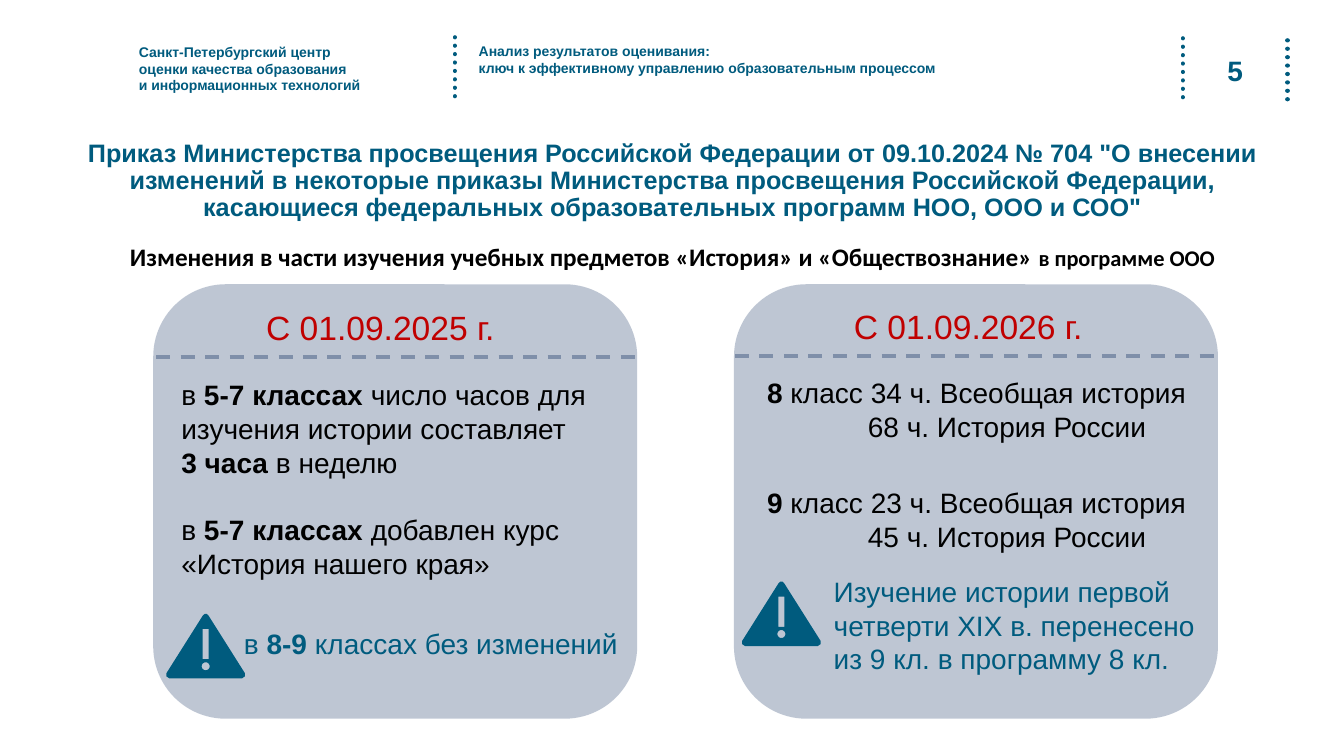
"""Slide on changes to history and social studies teaching hours."""
import math

import pptx
import pptx.util
from lxml import etree
from pptx.dml.color import RGBColor
from pptx.enum.dml import MSO_LINE
from pptx.enum.shapes import MSO_CONNECTOR, MSO_SHAPE
from pptx.enum.text import MSO_ANCHOR, PP_ALIGN
from pptx.oxml.ns import qn
from pptx.util import Inches

TEAL = RGBColor(0x00, 0x5B, 0x7E)
SLATE = RGBColor(0x7F, 0x8F, 0xA9)
RED = RGBColor(0xC0, 0x00, 0x00)
BLACK = RGBColor(0x00, 0x00, 0x00)

TRIANGLE = [(0.78, 0.59), (0.42, 0.02), (0.4, 0), (0.38, 0), (0.36, 0.02),
            (0, 0.59), (0, 0.62), (0.03, 0.64), (0.75, 0.64), (0.78, 0.62)]
BAR = [(0.36, 0.15), (0.42, 0.15), (0.42, 0.45), (0.36, 0.45)]
DOT = [(0.39 + 0.04 * math.cos(i * math.pi / 8),
        0.52 - 0.04 * math.sin(i * math.pi / 8)) for i in range(16)]


def add_text(slide, box, paragraphs, size, color, font="Arial", align=None,
             anchor=MSO_ANCHOR.TOP, spacing=None, gaps=(), indents=()):
    """Add a text box; each paragraph is a list of (text, bold[, size]) runs."""
    frame = slide.shapes.add_textbox(*map(Inches, box)).text_frame
    frame.word_wrap = True
    frame.vertical_anchor = anchor
    for index, runs in enumerate(paragraphs):
        paragraph = frame.paragraphs[0] if index == 0 else frame.add_paragraph()
        if index < len(indents):
            properties = paragraph._p.get_or_add_pPr()
            properties.set("marL", str(Inches(indents[index])))
        if index < len(gaps):
            paragraph.space_before = pptx.util.Pt(gaps[index])
        paragraph.alignment = align
        paragraph.line_spacing = spacing
        for text, bold, *own_size in runs:
            run = paragraph.add_run()
            run.text = text
            run.font.name = font
            run.font.size = pptx.util.Pt(own_size[0] if own_size else size)
            run.font.bold = bold
            run.font.color.rgb = color


def add_rule(slide, start, end, color, width, dash, cap="flat"):
    """Draw a dashed or dotted straight line."""
    rule = slide.shapes.add_connector(
        MSO_CONNECTOR.STRAIGHT, *map(Inches, start + end))
    rule.line.color.rgb = color
    rule.line.width = pptx.util.Pt(width)
    rule.line.dash_style = dash
    rule.line._ln.set("cap", cap)
    etree.SubElement(rule._element.spPr, qn("a:effectLst"))


def paint(shape, color):
    """Fill a shape plainly, without outline or shadow."""
    shape.shadow.inherit = False
    shape.fill.solid()
    shape.fill.fore_color.rgb = color
    shape.line.fill.background()


def add_card(slide, left):
    """Add a half-transparent rounded card."""
    card = slide.shapes.add_shape(
        MSO_SHAPE.ROUNDED_RECTANGLE,
        *map(Inches, (left, 2.82, 4.8, 4.31)))
    paint(card, SLATE)
    tint = card._element.spPr.find(qn("a:solidFill"))[0]
    etree.SubElement(tint, qn("a:alpha")).set("val", "50000")


def add_warning(slide, left, top):
    """Add a warning triangle with a cut-out exclamation mark."""
    outline, *holes = [[(Inches(left + x), Inches(top + y)) for x, y in contour]
                       for contour in (TRIANGLE, BAR, DOT)]
    builder = slide.shapes.build_freeform(*outline[0])
    builder.add_line_segments(outline[1:])
    for hole in holes:
        builder.move_to(*hole[0])
        builder.add_line_segments(hole[1:])
    paint(builder.convert_to_shape(), TEAL)


def add_header(slide):
    """Add the organisation, topic, page number and dotted dividers."""
    for x, top in ((4.51, 0.37), (11.73, 0.38), (12.77, 0.4)):
        add_rule(slide, (x, top), (x, 0.99), TEAL, 3, MSO_LINE.ROUND_DOT, "rnd")
    add_text(slide, (1.28, 0.38, 2.59, 0.61),
             [[("Санкт-Петербургский центр", True)],
              [("оценки качества образования", True)],
              [("и информационных технологий", True)]], 10, TEAL)
    add_text(slide, (4.65, 0.37, 6.33, 0.62),
             [[("Анализ результатов оценивания:", True)],
              [("ключ к эффективному управлению образовательным процессом",
                True)]], 10, TEAL)
    add_text(slide, (11.98, 0.43, 0.54, 0.53), [[("5", True)]], 20, TEAL,
             align=PP_ALIGN.CENTER, anchor=MSO_ANCHOR.MIDDLE)


def add_titles(slide):
    """Add the order title and the subtitle."""
    centred = {"align": PP_ALIGN.CENTER, "anchor": MSO_ANCHOR.MIDDLE,
               "spacing": 0.9}
    add_text(slide, (0.63, 1.26, 12.08, 1.08),
             [[("Приказ Министерства просвещения Российской Федерации от "
                "09.10.2024 № 704 \"О внесении изменений в некоторые приказы "
                "Министерства просвещения Российской Федерации, касающиеся "
                "федеральных образовательных программ НОО, ООО и СОО\"",
                True)]], 18, TEAL, **centred)
    add_text(slide, (0.63, 2.02, 12.08, 1.08),
             [[("Изменения в части изучения учебных предметов «История» и "
                "«Обществознание» ", True), ("в программе ООО", True, 16)]],
             18, BLACK, font="Calibri", **centred)


def add_changes_2025(slide):
    """Fill the card for September 2025."""
    add_card(slide, 1.52)
    add_text(slide, (2.54, 3, 2.75, 0.5), [[("С 01.09.2025 г.", False)]], 24, RED)
    add_rule(slide, (1.55, 3.54), (6.35, 3.54), SLATE, 2.5, MSO_LINE.DASH)
    add_text(slide, (1.7, 3.7, 4.6, 2.12),
             [[("в ", False), ("5-7 классах ", True),
               ("число часов для изучения истории составляет", False)],
              [("3 часа", True), (" в неделю", False)],
              [("в ", False), ("5-7 классах ", True),
               ("добавлен курс «История нашего края»", False)]],
             20, BLACK, gaps=(0, 0, 24))
    add_warning(slide, 1.65, 6.09)
    add_text(slide, (2.32, 6.17, 3.98, 0.44),
             [[("в ", False), ("8-9", True),
               (" классах без изменений", False)]], 20, TEAL)


def add_changes_2026(slide):
    """Fill the card for September 2026."""
    add_card(slide, 7.28)
    add_text(slide, (8.37, 2.99, 2.75, 0.5), [[("С 01.09.2026 г.", False)]], 24, RED)
    add_rule(slide, (7.29, 3.53), (12.09, 3.53), SLATE, 2.5, MSO_LINE.DASH)
    for top, grade, world, russia in ((3.68, "8", 34, 68), (4.77, "9", 23, 45)):
        add_text(slide, (7.51, top, 4.46, 0.77),
                 [[(grade, True), (f" класс {world} ч. Всеобщая история", False)],
                  [(f"{russia} ч. История России", False)]],
                 20, BLACK, indents=(0, 1))
    add_warning(slide, 7.36, 5.77)
    add_text(slide, (8.17, 5.65, 3.98, 1.11),
             [[("Изучение истории первой четверти XIX в. перенесено "
                "из 9 кл. в программу 8 кл.", False)]], 20, TEAL)


def main():
    """Build and save the slide."""
    deck = pptx.Presentation()
    deck.slide_width, deck.slide_height = Inches(13.33), Inches(7.5)
    slide = deck.slides.add_slide(deck.slide_layouts[6])
    add_header(slide)
    add_titles(slide)
    add_changes_2025(slide)
    add_changes_2026(slide)
    deck.save("out.pptx")


if __name__ == "__main__":
    main()
